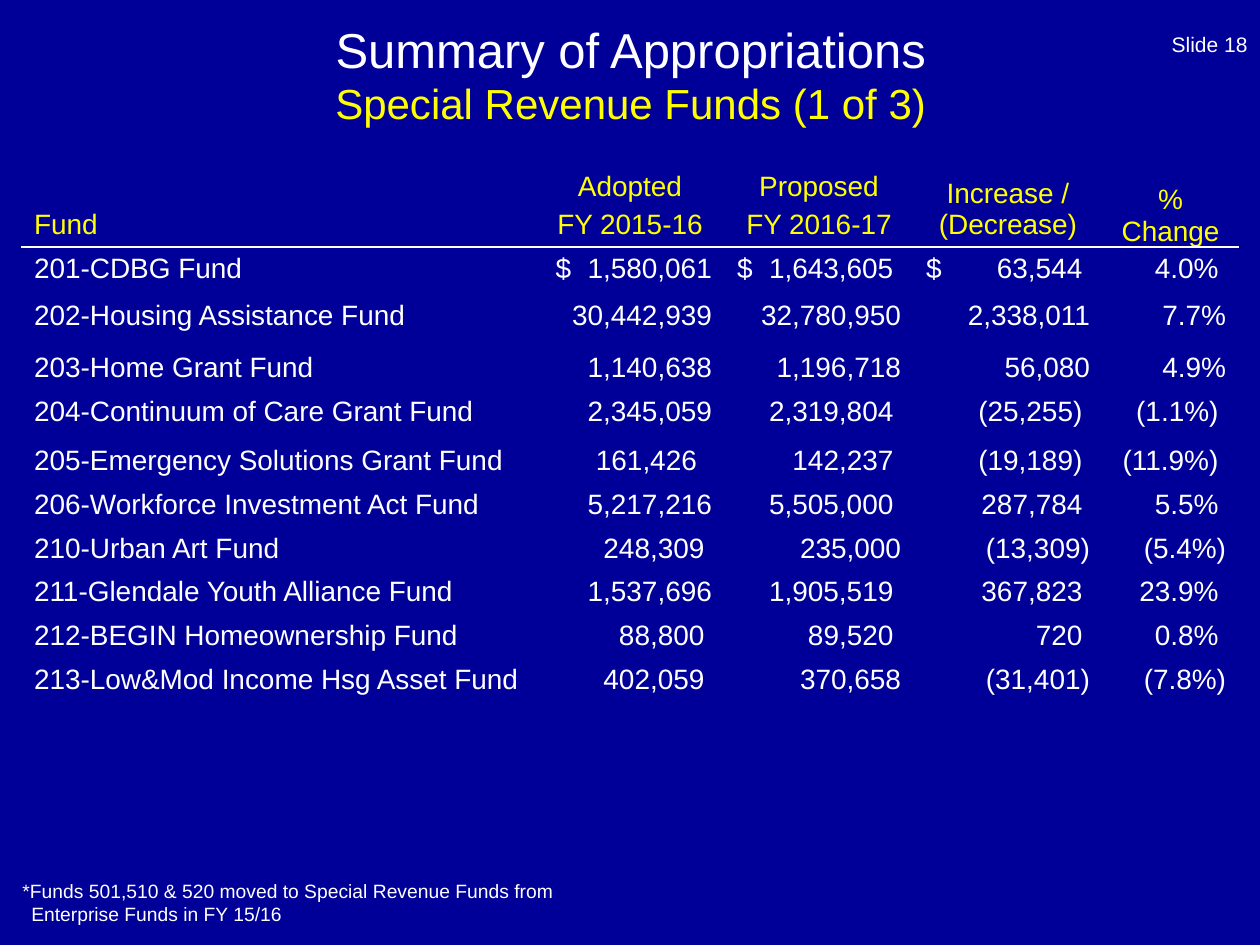
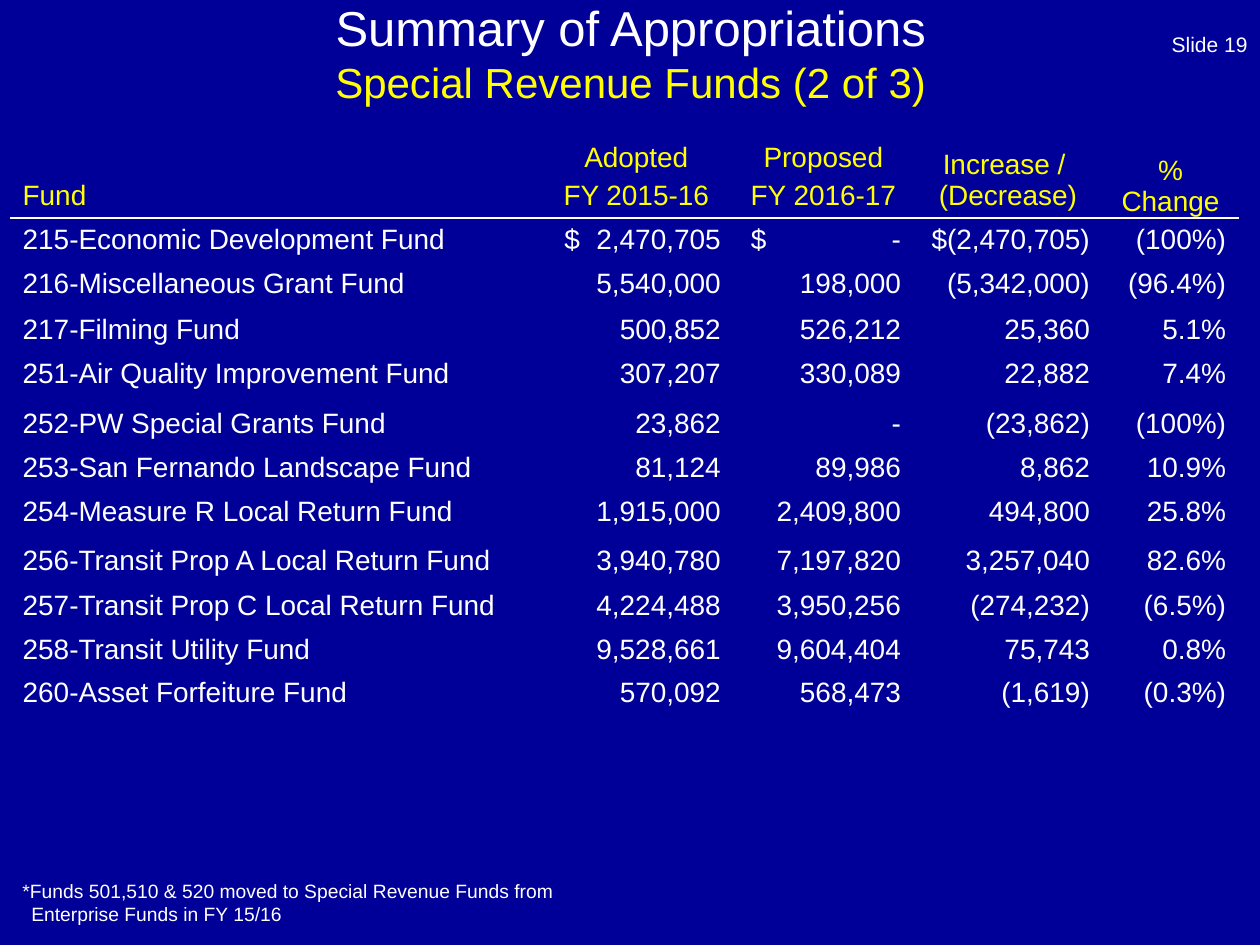
from lxml import etree
from pptx import Presentation
from pptx import util as u
from pptx.dml import color
from pptx.enum import text as t
from pptx.oxml import ns

NAVY, WHITE, GOLD = "000099", "FFFFFF", "FFFF00"
PLAIN = "{2D5ABB26-0587-4C30-8999-92F81FD0307C}"
LEFT, MID, RIGHT = t.PP_ALIGN.LEFT, t.PP_ALIGN.CENTER, t.PP_ALIGN.RIGHT
LOW = t.MSO_ANCHOR.BOTTOM
SPACE = 0.06
NOTE = ("*Funds 501,510 & 520 moved to Special Revenue Funds "
        "from Enterprise Funds in FY 15/16")

PAGES = [
    dict(
        num=18, part=1, top=0.25, spot=(0.17, 1.25), change="Increase / (Decrease)",
        cols=[4.08, 1.5, 1.5, 1.5, 1.08],
        rows=[0.71, 0.37, 0.42, 0.34, 0.39, 0.34, 0.3, 0.34, 0.3, 0.26, 0.46],
        leads={1: 0.16, 2: 0.1, 3: 0.1},
        funds=[
            ("201-CDBG Fund", "$\t1,580,061", "$\t1,643,605_", "$\t63,544_", "4.0%_"),
            ("202-Housing Assistance Fund", "30,442,939", "32,780,950", "2,338,011", "7.7%"),
            ("203-Home Grant Fund", "1,140,638", "1,196,718", "56,080", "4.9%"),
            ("204-Continuum of Care Grant Fund", "2,345,059", "2,319,804_", "(25,255)_", "(1.1%)_"),
            ("205-Emergency Solutions Grant Fund", "161,426__", "142,237_", "(19,189)_", "(11.9%)_"),
            ("206-Workforce Investment Act Fund", "5,217,216", "5,505,000_", "287,784_", "5.5%_"),
            ("210-Urban Art Fund", "248,309_", "235,000", "(13,309)", "(5.4%)"),
            ("211-Glendale Youth Alliance Fund", "1,537,696", "1,905,519_", "367,823_", "23.9%_"),
            ("212-BEGIN Homeownership Fund", "88,800_", "89,520_", "720_", "0.8%_"),
            ("213-Low&Mod Income Hsg Asset Fund", "402,059_", "370,658", "(31,401)", "(7.8%)"),
        ]),
    dict(
        num=19, part=2, top=0.08, spot=(0.08, 1.08), change="Increase / \n(Decrease)",
        cols=[4.2, 1.54, 1.43, 1.5, 1.08],
        rows=[0.44, 0.32, 0.37, 0.26, 0.4, 0.29, 0.33, 0.39, 0.36, 0.33, 0.31, 0.36],
        leads={1: 0.2, 2: 0.14},
        funds=[
            ("215-Economic Development Fund", "$\t2,470,705", "$\t-", "$(2,470,705)", "(100%)"),
            ("216-Miscellaneous Grant Fund", "5,540,000", "198,000", "(5,342,000)", "(96.4%)"),
            ("217-Filming Fund", "500,852", "526,212", "25,360", "5.1%"),
            ("251-Air Quality Improvement Fund", "307,207", "330,089", "22,882", "7.4%"),
            ("252-PW Special Grants Fund", "23,862", "-", "(23,862)", "(100%)"),
            ("253-San Fernando Landscape Fund", "81,124", "89,986", "8,862", "10.9%"),
            ("254-Measure R Local Return Fund", "1,915,000", "2,409,800", "494,800", "25.8%"),
            ("256-Transit Prop A Local Return Fund", "3,940,780", "7,197,820", "3,257,040", "82.6%"),
            ("257-Transit Prop C Local Return Fund", "4,224,488", "3,950,256", "(274,232)", "(6.5%)"),
            ("258-Transit Utility Fund", "9,528,661", "9,604,404", "75,743", "0.8%"),
            ("260-Asset Forfeiture Fund", "570,092", "568,473", "(1,619)", "(0.3%)"),
        ]),
]


def tint(code):
    """Turn a hex string into a colour."""
    return color.RGBColor.from_string(code)


def put(item, values):
    """Set each attribute of an item from a dict."""
    for name, value in values.items():
        setattr(item, name, value)


def sub(node, tag, **attrs):
    """Add a child element and return it."""
    return etree.SubElement(node, ns.qn(tag), attrs)


class Deck:
    """Hold the style and the current slide."""

    def __init__(self):
        """Start an empty deck."""
        self.show = Presentation()
        put(self.show, dict(slide_width=u.Inches(10), slide_height=u.Inches(7.5)))

    def page(self):
        """Add a blank slide with the shared background."""
        self.slide = self.show.slides.add_slide(self.show.slide_layouts[6])
        fill = self.slide.background.fill
        fill.solid()
        fill.fore_color.rgb = tint(NAVY)

    def font(self, font, size, code):
        """Style a font."""
        put(font, dict(name="Arial", size=u.Pt(size)))
        font.color.rgb = tint(code)

    def box(self, spot, runs, align, anchor):
        """Add a text box whose runs are parted by line breaks."""
        frame = self.slide.shapes.add_textbox(*map(u.Inches, spot)).text_frame
        put(frame, dict(word_wrap=True, vertical_anchor=anchor))
        para = frame.paragraphs[0]
        para.alignment = align
        for i, (words, size, code) in enumerate(runs):
            if i:
                para.add_line_break()
            run = para.add_run()
            run.text = words
            self.font(run.font, size, code)
        return frame

    def note(self, words):
        """Add the footnote with a hanging indent."""
        frame = self.box((0.08, 6.93, 4.5, 0.47), [(words, 11, WHITE)], LEFT, t.MSO_ANCHOR.TOP)
        frame.auto_size = t.MSO_AUTO_SIZE.SHAPE_TO_FIT_TEXT
        props = frame.paragraphs[0]._p.get_or_add_pPr()
        hang = u.Inches(0.07)
        for name, value in {"marL": hang, "indent": -hang}.items():
            props.set(name, str(value))

    def rule(self, cell):
        """Draw a white line under a cell."""
        line = etree.Element(ns.qn("a:lnB"), w=str(u.Pt(1)))
        sub(sub(line, "a:solidFill"), "a:srgbClr", val=WHITE)
        cell._tc.get_or_add_tcPr().insert(0, line)

    def cell(self, cell, words, align, code, gap=0, stop=None):
        """Write styled text in a cell, with a right tab stop if given."""
        cell.fill.background()
        cell.margin_bottom = u.Inches(0.03)
        cell.text = words
        for i, para in enumerate(cell.text_frame.paragraphs):
            if stop:
                tabs = sub(para._p.get_or_add_pPr(), "a:tabLst")
                sub(tabs, "a:tab", pos=str(u.Inches(stop)), algn="r")
            put(para, dict(alignment=align, space_before=u.Pt(gap if i else 0)))
            self.font(para.font, 16, code)
            for run in para.runs:
                self.font(run.font, 16, code)

    def sum(self, cell, words, width, lead):
        """Write an amount; each underscore leaves a space at the right."""
        value = words.rstrip("_")
        edge = 0.1 + SPACE * (len(words) - len(value))
        if "\t" in value:
            self.cell(cell, value, LEFT, WHITE, stop=width - lead - edge)
            put(cell, dict(margin_left=u.Inches(lead), margin_right=0))
        else:
            self.cell(cell, value, RIGHT, WHITE)
            cell.margin_right = u.Inches(edge)

    def grid(self, spot, cols, rows, heads, funds, leads):
        """Add the fund table."""
        size = sum(cols), sum(rows)
        grid = self.slide.shapes.add_table(
            len(rows), len(cols), *map(u.Inches, (*spot, *size))).table
        put(grid, dict(first_row=False, horz_banding=False))
        grid._tbl.tblPr.find(ns.qn("a:tableStyleId")).text = PLAIN
        for col, width in zip(grid.columns, cols):
            col.width = u.Inches(width)
        for row, height in zip(grid.rows, rows):
            row.height = u.Inches(height)
        thin = u.Inches(0.01)
        for c, (words, gap) in enumerate(heads):
            head = grid.cell(0, c)
            self.cell(head, words, MID if c else LEFT, GOLD, gap)
            put(head, dict(vertical_anchor=LOW, margin_top=thin, margin_bottom=u.Inches(0.05)))
            self.rule(head)
        put(head, dict(margin_left=thin, margin_right=thin, margin_bottom=0))
        for r, (name, *sums) in enumerate(funds, 1):
            self.cell(grid.cell(r, 0), name, LEFT, WHITE)
            for c, words in enumerate(sums, 1):
                self.sum(grid.cell(r, c), words, cols[c], leads.get(c, 0.1))


def main():
    """Build and save the deck."""
    deck = Deck()
    for page in PAGES:
        deck.page()
        deck.box((7.67, 0, 2.33, 0.5), [(f"Slide {page['num']}", 12, WHITE)], RIGHT, LOW)
        deck.box((0.34, page["top"], 9.33, 0.67),
                 [("Summary of Appropriations", 28, WHITE),
                  (f"Special Revenue Funds ({page['part']} of 3)", 24, GOLD)],
                 MID, t.MSO_ANCHOR.MIDDLE)
        heads = [("Fund", 0), ("Adopted\nFY 2015-16", 4), ("Proposed\nFY 2016-17", 4),
                 (page["change"], 0), ("%\nChange", 0)]
        deck.grid(page["spot"], page["cols"], page["rows"], heads, page["funds"], page["leads"])
        deck.note(NOTE)
    deck.show.save("out.pptx")


if __name__ == "__main__":
    main()
